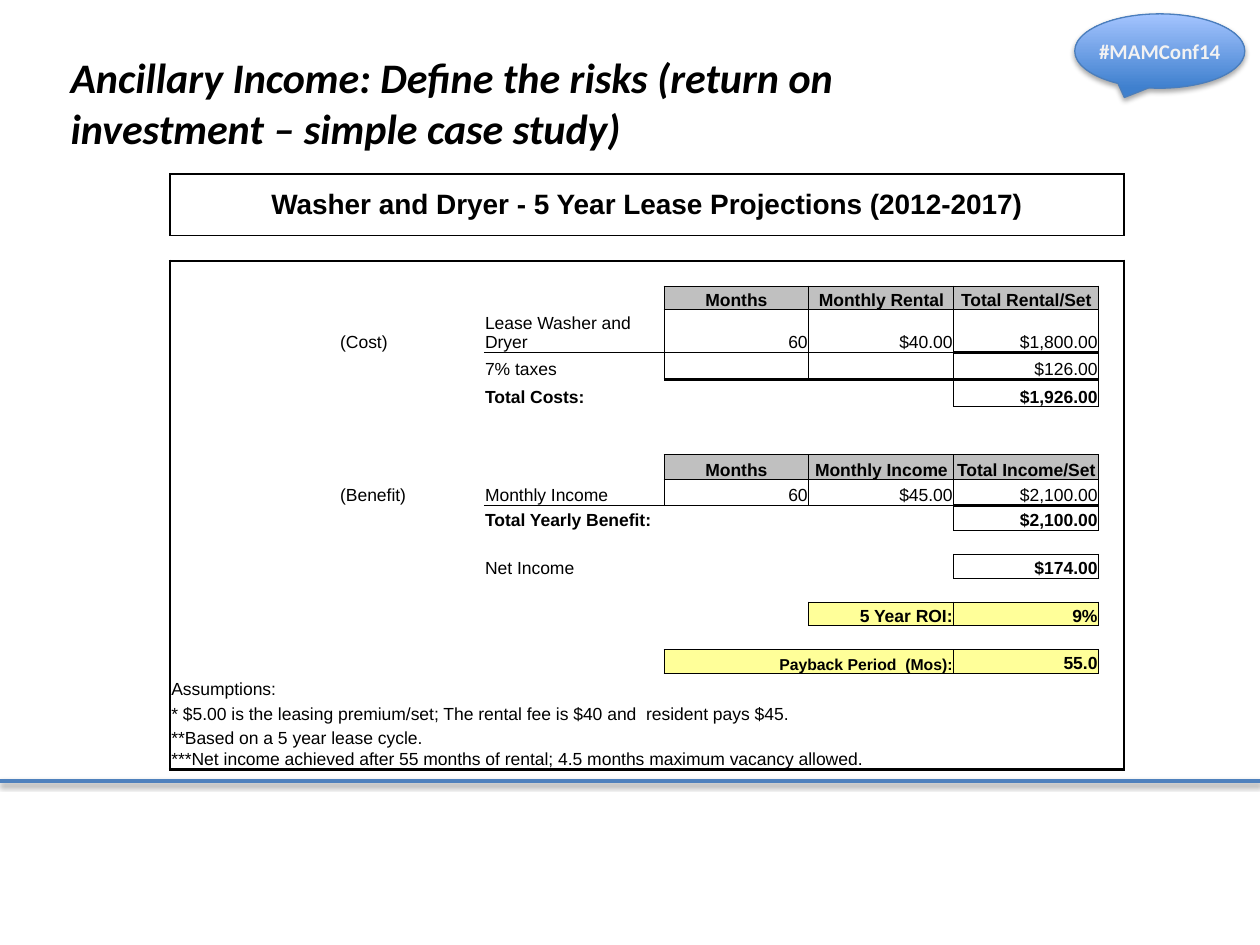
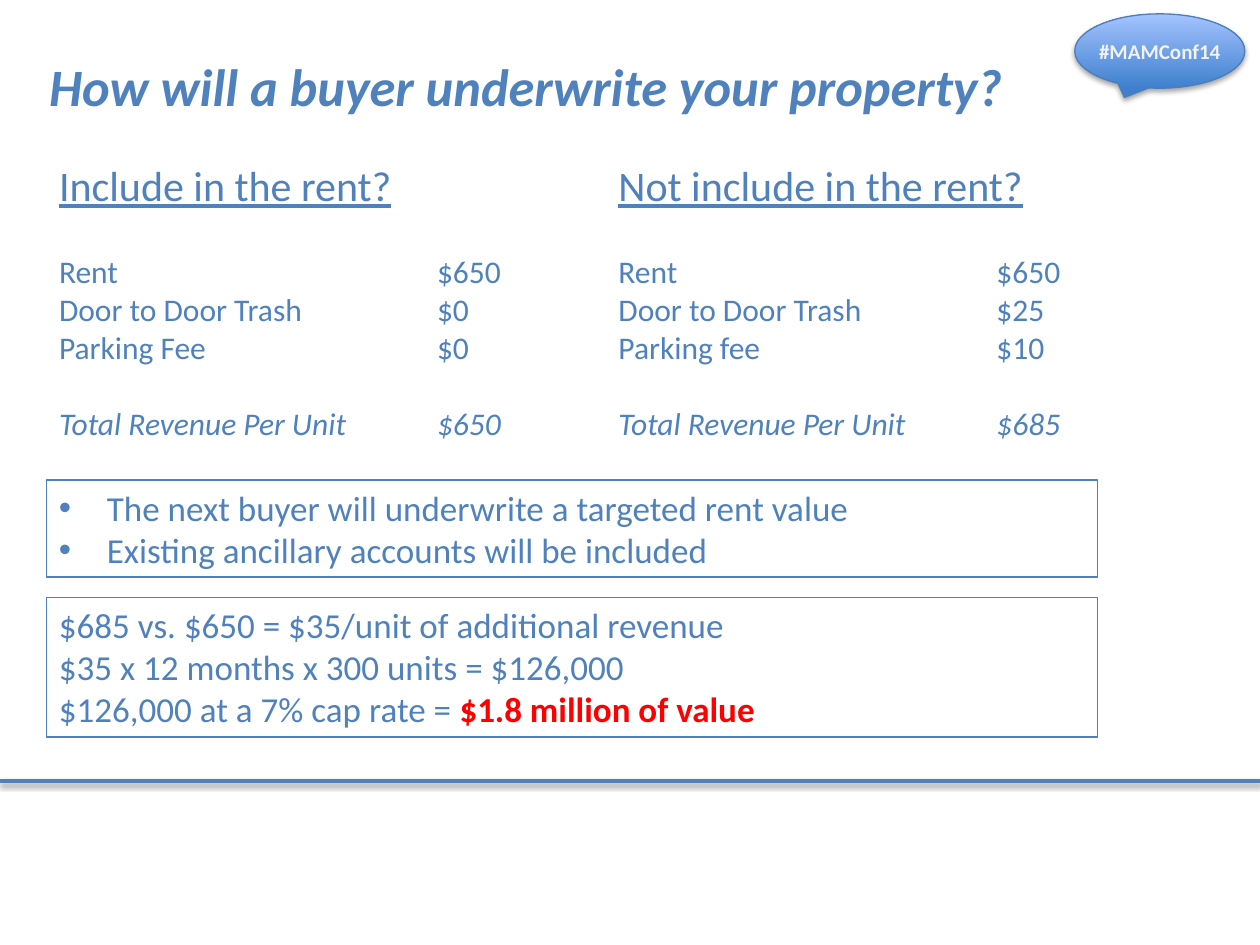
from lxml import etree
from pptx import Presentation
from pptx import util as u
from pptx.dml.color import RGBColor
from pptx.enum import shapes, text
from pptx.oxml import ns

COLS, ROWS = 100, 75
UNIT = u.Inches(0.1)
FONT, TABLE_FONT = "Calibri", "Arial"
COLORS = {
    "blue": "4F81BD", "edge": "4B7EBC", "deep": "3F80CE", "sky": "A4C4FF",
    "pale": "F2F2F2", "black": "000000", "white": "FFFFFF", "red": "FF0000",
    "header": "C0C0C0", "result": "FFFF99",
}

LEASE_COLS = [13.4, 11.5, 14.3, 11.5, 11.5, 11.5, 2]
LEASE_ROWS = [4.9, 2, 2, 1.9, 3.4, 2.1, 2.2, 1.9, 1.9, 2, 2, 2] + [1.9] * 6 + [2, 2, 1.9, 1.7]
LEASE_TEXT = {
    0: {0: "Washer and Dryer - 5 Year Lease Projections (2012-2017)"},
    3: {3: "Months", 4: "Monthly Rental", 5: "Total Rental/Set"},
    4: {1: "(Cost)", 2: "Lease Washer and Dryer", 3: "60", 4: "$40.00", 5: "$1,800.00"},
    5: {2: "7% taxes", 5: "$126.00"},
    6: {2: "Total Costs:", 5: "$1,926.00"},
    9: {3: "Months", 4: "Monthly Income", 5: "Total Income/Set"},
    10: {1: "(Benefit)", 2: "Monthly Income", 3: "60", 4: "$45.00", 5: "$2,100.00"},
    11: {2: "Total Yearly Benefit:", 5: "$2,100.00"},
    13: {2: "Net Income", 5: "$174.00"},
    15: {4: "5 Year ROI:", 5: "9%"},
    17: {3: "Payback Period  (Mos):", 5: "55.0"},
    18: {0: "Assumptions:"},
    19: {0: "* $5.00 is the leasing premium/set; The rental fee is $40 and  resident pays $45."},
    20: {0: "**Based on a 5 year lease cycle."},
    21: {0: "***Net income achieved after 55 months of rental; "
            "4.5 months maximum vacancy allowed."},
}
HEADER_ROWS, RESULT_ROWS = (3, 9), (15, 17)
BOLD_ROWS = (0, 3, 6, 9, 11, 13, 15, 17)
MERGES = [(0, 0, 6), (17, 3, 4), (19, 0, 4), (20, 0, 1), (21, 0, 4)]
BOXED = {3: (3, 4, 5), 4: (3, 4, 5), 5: (3, 4, 5), 6: (5,), 9: (3, 4, 5),
         10: (3, 4, 5), 11: (5,), 13: (5,), 15: (4, 5), 17: (5,)}


def rgb(name):
    """Return a palette colour."""
    return RGBColor.from_string(COLORS[name])


def at(*box):
    """Turn grid columns and rows into slide lengths."""
    return [int(v * UNIT) for v in box]


def sub(parent, tag, **attrs):
    """Append a DrawingML element."""
    return etree.SubElement(parent, ns.qn("a:" + tag), {k: str(v) for k, v in attrs.items()})


def style(p, size, color, name=FONT, **flags):
    """Format every run of a paragraph."""
    for r in p.runs:
        r.font.size, r.font.name = u.Pt(size), name
        r.font.color.rgb = rgb(color)
        for flag, value in flags.items():
            setattr(r.font, flag, value)


def add_shadow(sp, distance, opacity):
    """Give a shape a soft shadow below it."""
    effects = sub(sp._element.spPr, "effectLst")
    shadow = sub(effects, "outerShdw", blurRad=u.Pt(3.1), dist=u.Pt(distance),
                 dir=90 * 60000, rotWithShape=0)
    sub(sub(shadow, "srgbClr", val=COLORS["black"]), "alpha", val=opacity * 1000)


def add_hashtag(s, box):
    """Draw the hashtag speech bubble."""
    sp = s.shapes.add_shape(shapes.MSO_SHAPE.OVAL_CALLOUT, *at(*box))
    sp.fill.gradient()
    sp.fill.gradient_angle = 90
    for stop, name in zip(sp.fill.gradient_stops, ("deep", "sky")):
        stop.color.rgb = rgb(name)
    sp.line.color.rgb, sp.line.width = rgb("edge"), u.Pt(0.75)
    add_shadow(sp, 1.8, 35)
    tf = sp.text_frame
    tf.text = "#MAMConf14"
    tf.word_wrap = False
    tf.margin_left = tf.margin_right = tf.margin_top = tf.margin_bottom = 0
    tf.vertical_anchor = text.MSO_ANCHOR.MIDDLE
    tf.paragraphs[0].alignment = text.PP_ALIGN.CENTER
    style(tf.paragraphs[0], 12, "pale", bold=True)


def add_rule(s, row):
    """Draw the footer line across the slide."""
    line = s.shapes.add_connector(shapes.MSO_CONNECTOR.STRAIGHT, *at(0, row, COLS, row))
    line.line.color.rgb, line.line.width = rgb("blue"), u.Pt(2)
    add_shadow(line, 1.6, 38)


def new_slide(prs, title, box, size, color):
    """Add a slide with the shared bubble, line and title style."""
    s = prs.slides.add_slide(prs.slide_layouts[5])
    add_hashtag(s, (85.3, 1.1, 13.5, 5.9))
    add_rule(s, 62)
    sp = s.shapes.title
    sp.left, sp.top, sp.width, sp.height = at(*box)
    tf = sp.text_frame
    tf.text = title
    tf.word_wrap, tf.auto_size = True, text.MSO_AUTO_SIZE.NONE
    tf.vertical_anchor = text.MSO_ANCHOR.TOP
    tf.paragraphs[0].alignment = text.PP_ALIGN.LEFT
    style(tf.paragraphs[0], size, color, bold=True, italic=True)
    return s


def add_text(s, box, lines, size, outlined=False):
    """Add a blue text box and return its paragraphs."""
    sp = s.shapes.add_textbox(*at(*box))
    if outlined:
        sp.line.color.rgb, sp.line.width = rgb("blue"), u.Pt(0.75)
    tf = sp.text_frame
    tf.word_wrap = True
    tf.text = "\n".join(lines)
    for p in tf.paragraphs:
        style(p, size, "blue")
    return tf.paragraphs


def lease_borders():
    """Return line widths of horizontal and vertical table edges."""
    across, down = {}, {}

    def frame(top, left, bottom, right, width):
        for c in range(left, right + 1):
            across[top, c] = across[bottom + 1, c] = width
        for r in range(top, bottom + 1):
            down[r, left] = down[r, right + 1] = width

    frame(0, 0, 0, 6, 1)
    frame(2, 0, len(LEASE_ROWS) - 1, 6, 1.5)
    frame(17, 3, 17, 4, 0.5)
    for r, columns in BOXED.items():
        for c in columns:
            frame(r, c, r, c, 0.5)
    across.update({(5, 2): 0.5, (11, 2): 0.5})
    across.update(dict.fromkeys([(5, 5), (6, 3), (6, 4), (6, 5), (11, 5)], 2))
    return across, down


def draw_edges(cell, widths):
    """Write the left, right, top and bottom lines of a cell."""
    tcPr = cell._tc.get_or_add_tcPr()
    for i, (side, width) in enumerate(zip("LRTB", widths)):
        ln = sub(tcPr, "ln" + side, w=u.Pt(width or 0))
        if width:
            sub(sub(ln, "solidFill"), "srgbClr", val=COLORS["black"])
        else:
            sub(ln, "noFill")
        tcPr.insert(i, ln)


def fill_cell(cell, r, c):
    """Set the text, alignment and fill of a lease table cell."""
    content = LEASE_TEXT.get(r, {}).get(c, "")
    cell.margin_left = cell.margin_right = cell.margin_top = u.Inches(0.01)
    cell.margin_bottom = 0
    cell.vertical_anchor = text.MSO_ANCHOR.BOTTOM if r else text.MSO_ANCHOR.MIDDLE
    cell.text = content
    p = cell.text_frame.paragraphs[0]
    if r == 0 or r in HEADER_ROWS:
        p.alignment = text.PP_ALIGN.CENTER
    elif c > 2:
        p.alignment = text.PP_ALIGN.RIGHT
    size = 16 if r == 0 else 9 if (r, c) == (17, 3) else 10
    bold = r in BOLD_ROWS and content != "Net Income"
    style(p, size, "black", TABLE_FONT, bold=bold)
    if not content:
        sub(p._p, "endParaRPr", sz=800)
    fill = "white"
    if content and r in HEADER_ROWS:
        fill = "header"
    elif content and r in RESULT_ROWS:
        fill = "result"
    cell.fill.solid()
    cell.fill.fore_color.rgb = rgb(fill)


def add_lease_table(s, left, top):
    """Build the washer and dryer projection table."""
    box = at(left, top, sum(LEASE_COLS), sum(LEASE_ROWS))
    tbl = s.shapes.add_table(len(LEASE_ROWS), len(LEASE_COLS), *box).table
    tbl.first_row = tbl.horz_banding = False
    for col, width in zip(tbl.columns, LEASE_COLS):
        col.width = int(width * UNIT)
    for row, height in zip(tbl.rows, LEASE_ROWS):
        row.height = int(height * UNIT)
    for r, first, last in MERGES:
        tbl.cell(r, first).merge(tbl.cell(r, last))
    across, down = lease_borders()
    for r in range(len(LEASE_ROWS)):
        for c in range(len(LEASE_COLS)):
            cell = tbl.cell(r, c)
            fill_cell(cell, r, c)
            span = cell.span_width if cell.is_merge_origin else 1
            draw_edges(cell, (down.get((r, c)), down.get((r, c + span)),
                              across.get((r, c)), across.get((r + 1, c))))


def add_rent_column(s, box, heading, items, total):
    """List one rent option with its values on a tab stop."""
    rows = items + [("Total Revenue Per Unit", total)]
    paragraphs = add_text(s, box, [heading] + ["\t".join(row) for row in rows], 18)
    style(paragraphs[0], 24, "blue", underline=True)
    for p in paragraphs[1:]:
        sub(sub(p._p.get_or_add_pPr(), "tabLst"), "tab", pos=u.Inches(3), algn="l")
    paragraphs[1].space_before = u.Pt(24)
    paragraphs[-1].space_before = u.Pt(22)
    style(paragraphs[-1], 18, "blue", italic=True)


def add_buyer_notes(s, box):
    """Add the outlined bullet list."""
    lines = ["The next buyer will underwrite a targeted rent value",
             "Existing ancillary accounts will be included"]
    for p in add_text(s, box, lines, 20, outlined=True):
        pPr = p._p.get_or_add_pPr()
        pPr.set("marL", str(u.Inches(0.38)))
        pPr.set("indent", str(-u.Inches(0.38)))
        sub(pPr, "buFont", typeface="Arial")
        sub(pPr, "buChar", char="•")


def add_value_sum(s, box):
    """Add the outlined calculation with its red result."""
    lines = ["$685 vs. $650 = $35/unit of additional revenue",
             "$35 x 12 months x 300 units = $126,000",
             "$126,000 at a 7% cap rate = "]
    p = add_text(s, box, lines, 20, outlined=True)[-1]
    r = p.add_run()
    r.text = "$1.8 million of value"
    r.font.size, r.font.name, r.font.bold = u.Pt(20), FONT, True
    r.font.color.rgb = rgb("red")


def case_study_slide(prs):
    """Build the return on investment slide."""
    title = "Ancillary Income: Define the risks (return on investment – simple case study)"
    s = new_slide(prs, title, (4.6, 3.6, 75.5, 9.1), 24, "black")
    add_lease_table(s, 13.5, 13.8)


def underwriting_slide(prs):
    """Build the rent comparison slide."""
    s = new_slide(prs, "How will a buyer underwrite your property?",
                  (2.9, 3.8, 83.4, 6.1), 30, "blue")
    left, width = 3.7, 83.4
    add_rent_column(s, (left, 12.2, 40.8, 23.6), "Include in the rent?",
                    [("Rent", "$650"), ("Door to Door Trash", "$0"), ("Parking Fee", "$0")],
                    "$650")
    add_rent_column(s, (left + 44.4, 12.2, 40.8, 23.6), "Not include in the rent?",
                    [("Rent", "$650"), ("Door to Door Trash", "$25"), ("Parking fee", "$10")],
                    "$685")
    add_buyer_notes(s, (left, 38.1, width, 7.7))
    add_value_sum(s, (left, 47.4, width, 11.1))


def main():
    """Build and save the presentation."""
    prs = Presentation()
    prs.slide_width, prs.slide_height = at(COLS, ROWS)
    case_study_slide(prs)
    underwriting_slide(prs)
    prs.save("out.pptx")


if __name__ == "__main__":
    main()
